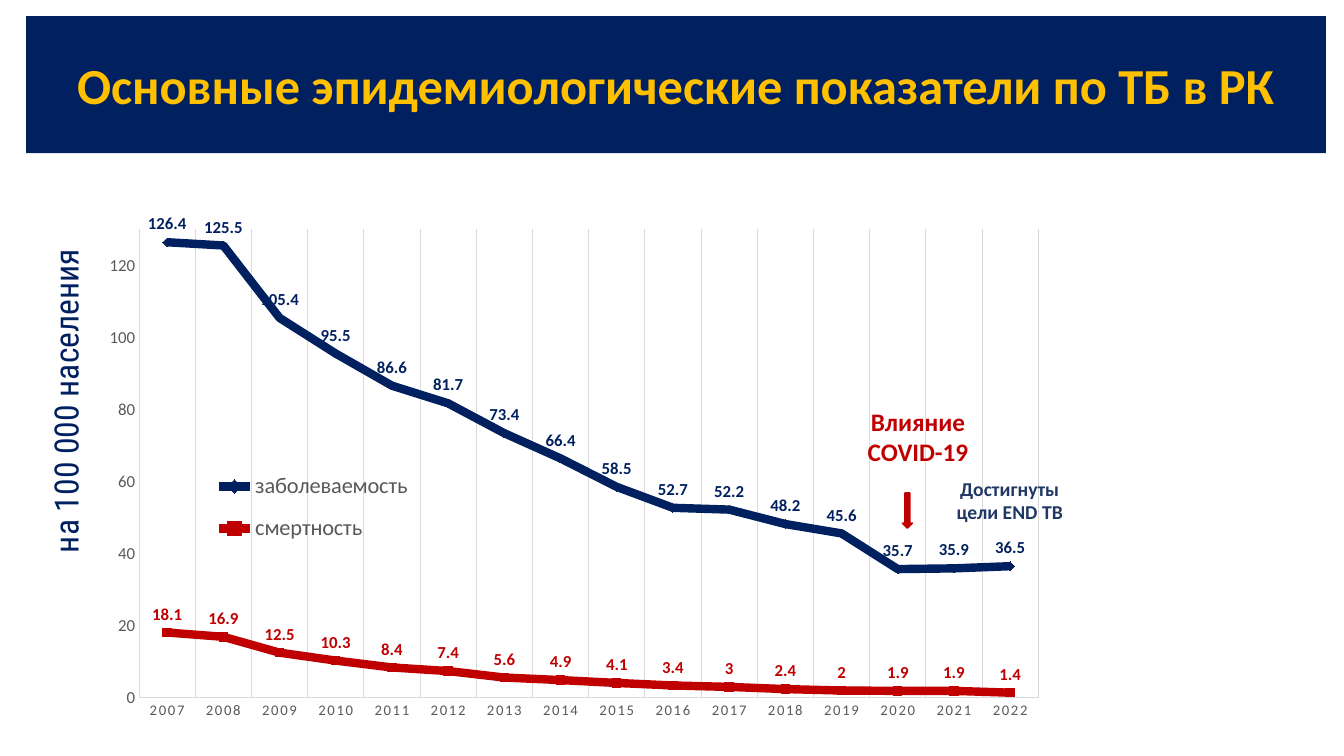
"""Build a slide on the main tuberculosis indicators."""
from lxml import etree
from pptx import Presentation
from pptx.chart.data import CategoryChartData
from pptx.dml.color import RGBColor
from pptx.enum import chart as kinds, shapes, text
from pptx.oxml import ns
from pptx.util import Inches, Pt

NAVY = RGBColor(0x00, 0x20, 0x60)
SLATE = RGBColor(0x20, 0x38, 0x64)
GOLD = RGBColor(0xFF, 0xC0, 0x00)
RED = RGBColor(0xC0, 0x00, 0x00)
GREY = RGBColor(0x59, 0x59, 0x59)
PALE = RGBColor(0xD9, 0xD9, 0xD9)
BLUE = RGBColor(0x5B, 0x9B, 0xD5)
ORANGE = RGBColor(0xED, 0x7D, 0x31)
BLACK = RGBColor(0x00, 0x00, 0x00)

YEARS = [str(year) for year in range(2007, 2023)]
INCIDENCE = [126.4, 125.5, 105.4, 95.5, 86.6, 81.7, 73.4, 66.4,
             58.5, 52.7, 52.2, 48.2, 45.6, 35.7, 35.9, 36.5]
MORTALITY = [18.1, 16.9, 12.5, 10.3, 8.4, 7.4, 5.6, 4.9,
             4.1, 3.4, 3, 2.4, 2, 1.9, 1.9, 1.4]
SERIES = [
    ("заболеваемость", INCIDENCE, NAVY, kinds.XL_MARKER_STYLE.DIAMOND, BLUE),
    ("смертность", MORTALITY, RED, kinds.XL_MARKER_STYLE.SQUARE, ORANGE),
]


def place(*lengths):
    """Convert left, top, width and height to inches."""
    return [Inches(length) for length in lengths]


def set_font(font, size, color, bold=False, name="Calibri"):
    """Set the look of a font."""
    font.name, font.size, font.bold = name, Pt(size), bold
    font.color.rgb = color


def write(frame, lines, size, color, bold=True, name="Calibri"):
    """Write centred lines into a text frame."""
    frame.word_wrap = True
    for index, line in enumerate(lines):
        para = frame.add_paragraph() if index else frame.paragraphs[0]
        para.text = line
        para.alignment = text.PP_ALIGN.CENTER
        set_font(para.font, size, color, bold, name)


def add_block(page, kind, spot, color):
    """Add a flat filled shape."""
    block = page.shapes.add_shape(kind, *place(*spot))
    block.shadow.inherit = False
    block.fill.solid()
    block.fill.fore_color.rgb = color
    block.line.fill.background()
    return block


def add_title(page, line):
    """Add the title band."""
    band = add_block(page, shapes.MSO_SHAPE.RECTANGLE, (0.26, 0.16, 12.89, 1.36), NAVY)
    band.text_frame.vertical_anchor = text.MSO_ANCHOR.MIDDLE
    write(band.text_frame, [line], 36, GOLD)


def add_unit(page, line):
    """Add the upright caption of the value axis."""
    box = page.shapes.add_textbox(*place(-1.24, 3.66, 3.64, 0.64))
    box.rotation = 270
    box.text_frame.vertical_anchor = text.MSO_ANCHOR.BOTTOM
    write(box.text_frame, [line], 24, NAVY, False, "Roboto Condensed")
    para = box.text_frame.paragraphs[0]
    para.line_spacing, para.space_before = 0.9, Pt(10)


def add_note(page, spot, lines, size, color):
    """Add a bold note over the chart."""
    box = page.shapes.add_textbox(*place(*spot))
    write(box.text_frame, lines, size, color)
    box.text_frame.auto_size = text.MSO_AUTO_SIZE.SHAPE_TO_FIT_TEXT


def add_arrow(page):
    """Add the arrow that points down at 2020."""
    arrow = add_block(page, shapes.MSO_SHAPE.UP_ARROW, (8.95, 4.89, 0.1, 0.35), RED)
    arrow.rotation = 180
    arrow.line.color.rgb = RED
    arrow.line.width = Pt(1)


def set_layout(parent, index, spot, inner=False):
    """Fix a chart part at fractions of the chart area."""
    for old in parent.findall(ns.qn("c:layout")):
        parent.remove(old)
    layout = etree.Element(ns.qn("c:layout"))
    parent.insert(index, layout)
    manual = etree.SubElement(layout, ns.qn("c:manualLayout"))
    settings = [("layoutTarget", "inner")] if inner else []
    settings += [("xMode", "edge"), ("yMode", "edge"), *zip("xywh", spot)]
    for tag, value in settings:
        etree.SubElement(manual, ns.qn("c:" + tag)).set("val", str(value))


def style_line(line, color, width):
    """Set the colour and width of a line."""
    line.color.rgb = color
    line.width = Pt(width)


def style_axis(axis, size):
    """Style the labels and the line of an axis."""
    axis.major_tick_mark = axis.minor_tick_mark = kinds.XL_TICK_MARK.NONE
    set_font(axis.tick_labels.font, size, GREY)
    style_line(axis.format.line, PALE, 0.75)


def style_series(series, color, marker, marker_color):
    """Style a line, its markers and its value labels."""
    series.smooth = False
    style_line(series.format.line, color, 6)
    series.marker.style, series.marker.size = marker, 6
    series.marker.format.fill.solid()
    series.marker.format.fill.fore_color.rgb = marker_color
    style_line(series.marker.format.line, color, 0.75)
    labels = series.data_labels
    labels.show_value = True
    labels.position = kinds.XL_LABEL_POSITION.ABOVE
    set_font(labels.font, 12, color, True)


def add_rates(page):
    """Add the line chart of incidence and mortality."""
    data = CategoryChartData()
    data.categories = YEARS
    for name, values, *_ in SERIES:
        data.add_series(name, values)
    chart = page.shapes.add_chart(
        kinds.XL_CHART_TYPE.LINE_MARKERS, *place(0.9, 1.52, 9.59, 5.81), data).chart
    chart.has_title = False
    set_font(chart.font, 10, BLACK)
    plot = chart.plots[0]
    plot.vary_by_categories = False
    for series, (_, _, *look) in zip(plot.series, SERIES):
        style_series(series, *look)

    years, rates = chart.category_axis, chart.value_axis
    style_axis(years, 10.5)
    years.tick_labels.font._element.set("spc", "120")
    years.has_major_gridlines = True
    style_line(years.major_gridlines.format.line, PALE, 0.75)
    style_axis(rates, 12)
    rates.has_major_gridlines = False
    rates.minimum_scale, rates.maximum_scale, rates.major_unit = 0, 130, 20

    chart.has_legend = True
    legend = chart.legend
    legend.position = kinds.XL_LEGEND_POSITION.TOP
    legend.include_in_layout = False
    set_font(legend.font, 16, GREY)
    set_layout(legend._element, 1, (0.12, 0.52, 0.22, 0.17))
    area = chart._chartSpace.find(".//" + ns.qn("c:plotArea"))
    set_layout(area, 0, (0.05, 0.13, 0.93, 0.8), inner=True)


def main():
    """Build and save the deck."""
    deck = Presentation()
    deck.slide_width, deck.slide_height = Inches(13.33), Inches(7.5)
    page = deck.slides.add_slide(deck.slide_layouts[6])
    add_unit(page, "на 100 000 населения")
    add_title(page, "Основные эпидемиологические показатели по ТБ в РК")
    add_rates(page)
    add_arrow(page)
    add_note(page, (8.36, 3.98, 1.49, 0.71), ["Влияние", "COVID-19"], 18, RED)
    add_note(page, (9.3, 4.68, 1.43, 0.57), ["Достигнуты", "цели END TB"], 14, SLATE)
    deck.save("out.pptx")


if __name__ == "__main__":
    main()
